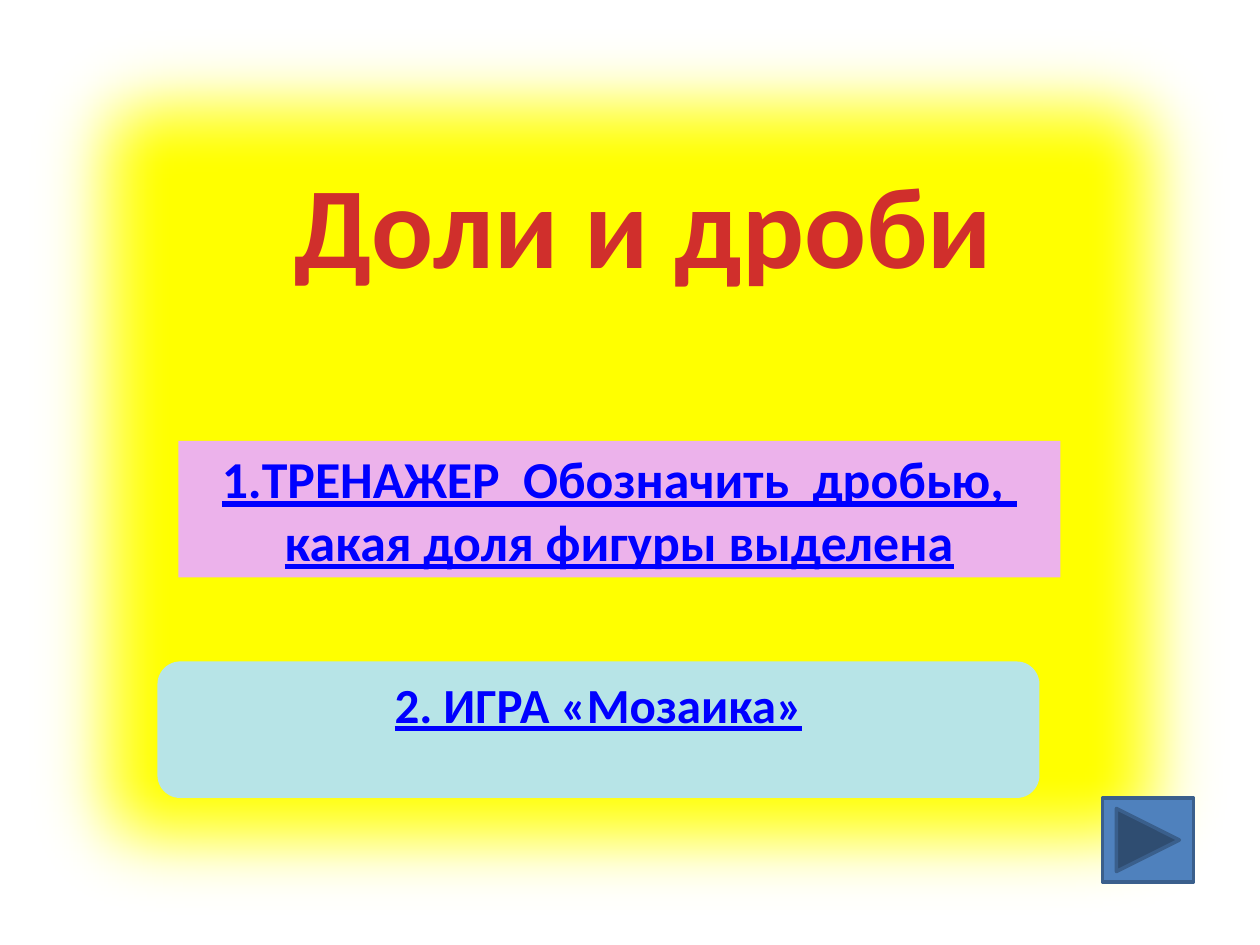
from lxml import etree
from pptx import Presentation
from pptx.dml.color import RGBColor
from pptx.enum.shapes import MSO_SHAPE
from pptx.enum.text import MSO_ANCHOR, PP_ALIGN
from pptx.oxml.ns import qn
from pptx.util import Pt

RECT = MSO_SHAPE.RECTANGLE
ROUND = MSO_SHAPE.ROUNDED_RECTANGLE
NEXT = MSO_SHAPE.ACTION_BUTTON_FORWARD_OR_NEXT
TOP = MSO_ANCHOR.TOP
CENTER = PP_ALIGN.CENTER

YELLOW = RGBColor(0xFF, 0xFF, 0x00)
PINK = RGBColor(0xEC, 0xB2, 0xEB)
AQUA = RGBColor(0xB7, 0xE4, 0xE7)
BLUE = RGBColor(0x4F, 0x81, 0xBD)
NAVY = RGBColor(0x3A, 0x5F, 0x8C)
LINK = RGBColor(0x00, 0x00, 0xFF)
RED = RGBColor(0xD0, 0x2F, 0x2C)
FONT = "Calibri"
WIDE, HIGH = 720, 540


def add_box(slide, kind, box, fill, line=None):
    shape = slide.shapes.add_shape(kind, *map(Pt, box))
    shape.shadow.inherit = False
    shape.fill.solid()
    shape.fill.fore_color.rgb = fill
    if line is None:
        shape.line.fill.background()
    else:
        shape.line.color.rgb = line
        shape.line.width = Pt(2)
    return shape


def add_text(shape, text, size, color, wrap=True, before=0, under=False):
    frame = shape.text_frame
    frame.word_wrap = wrap
    frame.vertical_anchor = TOP
    para = frame.paragraphs[0]
    para.alignment = CENTER
    para.space_before = Pt(before)
    run = para.add_run()
    run.text = text
    font = run.font
    font.name, font.size, font.bold = FONT, Pt(size), True
    font.underline = under
    font.color.rgb = color


def add_panel(slide, box, edge):
    """Background panel whose border fades out over the edge width."""
    panel = add_box(slide, RECT, box, YELLOW, NAVY)
    effects = panel._element.spPr.find(qn("a:effectLst"))
    etree.SubElement(effects, qn("a:softEdge"), rad=str(int(Pt(edge))))


def add_title(slide, box, text):
    title = slide.shapes.add_textbox(*map(Pt, box))
    add_text(title, text, 66, RED, wrap=False)


def add_item(slide, kind, box, fill, text, size, before):
    item = add_box(slide, kind, box, fill)
    add_text(item, text, size, LINK, before=before, under=True)


def main():
    deck = Presentation()
    deck.slide_width, deck.slide_height = Pt(WIDE), Pt(HIGH)
    slide = deck.slides.add_slide(deck.slide_layouts[6])

    # Background and heading
    add_panel(slide, (0, 0, WIDE, HIGH), 50)
    add_title(slide, (156, 84, 423.5, 87), "Доли и дроби")

    # Menu items
    add_item(slide, RECT, (102, 252, 504, 78), PINK,
             "1.ТРЕНАЖЕР  Обозначить  дробью,  какая доля фигуры выделена",
             29.6, 1.4)
    add_item(slide, ROUND, (90, 378, 504, 78), AQUA,
             "2. ИГРА «Мозаика»", 28, 5.8)

    # Next button
    add_box(slide, NEXT, (630, 456, 52, 48), BLUE, NAVY)

    deck.save("out.pptx")


if __name__ == "__main__":
    main()
